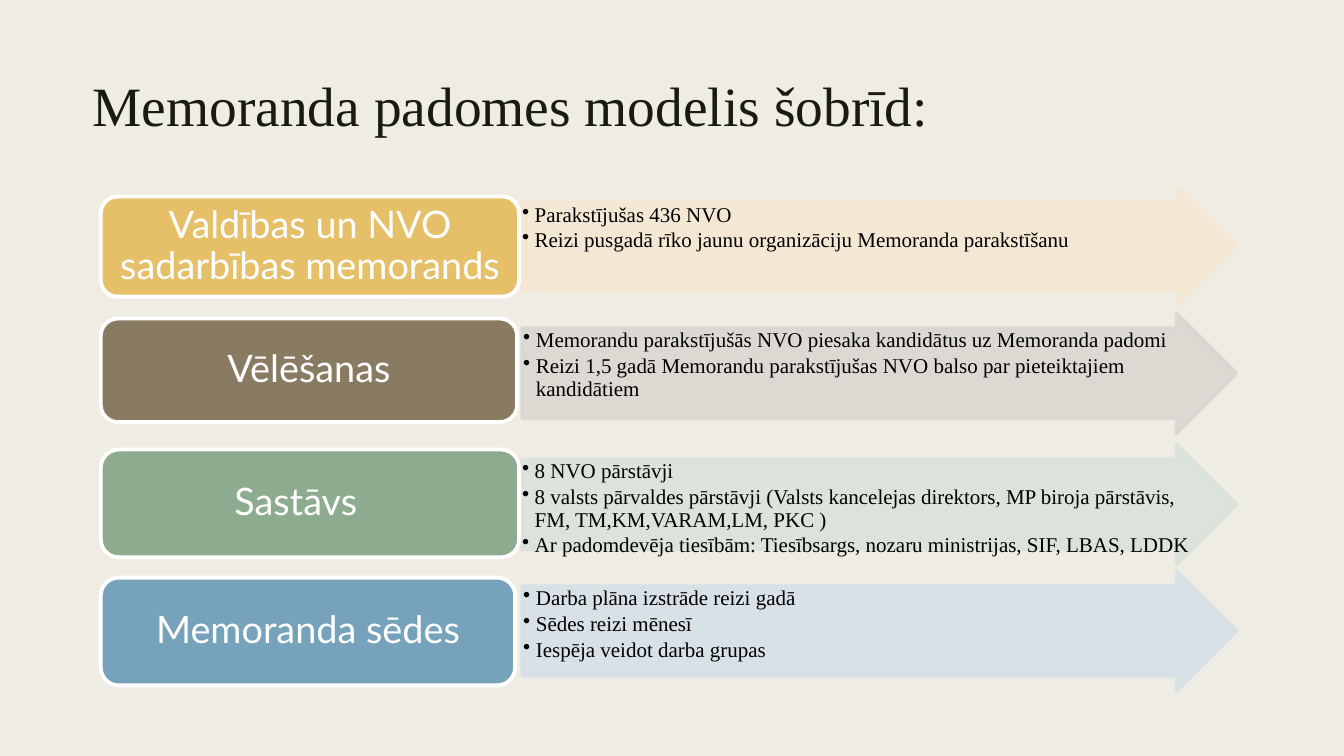
"""Build the slide that shows the current model of the Memorandum council."""
from collections import namedtuple

from lxml.etree import SubElement
from pptx import Presentation
from pptx.dml.color import RGBColor
from pptx.enum.shapes import MSO_SHAPE as Preset
from pptx.enum.text import MSO_ANCHOR as Anchor, PP_ALIGN as Align
from pptx.oxml.ns import qn
from pptx.util import Pt

BACKGROUND = RGBColor(0xEF, 0xED, 0xE3)
TITLE_INK = RGBColor(0x19, 0x1B, 0x0E)
BLACK = RGBColor(0x00, 0x00, 0x00)
WHITE = RGBColor(0xFF, 0xFF, 0xFF)
GOLD = RGBColor(0xE6, 0xC0, 0x69)
PALE_GOLD = RGBColor(0xF5, 0xE8, 0xD4)
BROWN = RGBColor(0x89, 0x7B, 0x61)
PALE_BROWN = RGBColor(0xDA, 0xD7, 0xD2)
GREEN = RGBColor(0x8D, 0xAB, 0x8E)
PALE_GREEN = RGBColor(0xDB, 0xE2, 0xDB)
BLUE = RGBColor(0x77, 0xA2, 0xBB)
PALE_BLUE = RGBColor(0xD6, 0xE0, 0xE7)

TITLE_FONT = {"name": "Times New Roman", "size": Pt(39.6)}
LABEL_FONT = {"name": "Lato", "size": Pt(27)}
DETAIL_FONT = {"name": "Times New Roman", "size": Pt(15)}

TITLE_FRAME = {"word_wrap": True, "vertical_anchor": Anchor.MIDDLE}
LABEL_FRAME = {
    "word_wrap": True, "vertical_anchor": Anchor.MIDDLE,
    "margin_left": Pt(8), "margin_right": Pt(8),
    "margin_top": Pt(4), "margin_bottom": Pt(4),
}
DETAIL_FRAME = {
    "word_wrap": True, "vertical_anchor": Anchor.TOP,
    "margin_left": Pt(0.75), "margin_right": Pt(0.75),
    "margin_top": Pt(0.75), "margin_bottom": Pt(0.75),
}

TITLE_PARAGRAPH = {"alignment": Align.LEFT, "line_spacing": 0.89}
LABEL_PARAGRAPH = {"alignment": Align.CENTER, "line_spacing": 0.9}
DETAIL_PARAGRAPH = {
    "alignment": Align.LEFT, "line_spacing": 0.9,
    "space_after": Pt(2.25), "level": 1,
}

BULLET_INDENT = Pt(9)
LABEL_LEFT = 72
ARROW_RIGHT = 883.2

Row = namedtuple("Row", "label details label_box arrow_box color pale")

ROWS = [
    Row("Valdības un NVO sadarbības memorands",
        ["Parakstījušas 436 NVO",
         "Reizi pusgadā rīko jaunu organizāciju Memoranda parakstīšanu"],
        (140.4, 298.8, 71.5), (372.2, 134.6, 83), GOLD, PALE_GOLD),
    Row("Vēlēšanas",
        ["Memorandu parakstījušās NVO piesaka kandidātus uz Memoranda padomi",
         "Reizi 1,5 gadā Memorandu parakstījušas NVO balso par pieteiktajiem kandidātiem"],
        (227.5, 297.4, 74), (373, 223.9, 85.5), BROWN, PALE_BROWN),
    Row("Sastāvs\t",
        ["8 NVO pārstāvji",
         "8 valsts pārvaldes pārstāvji (Valsts kancelejas direktors, MP biroja pārstāvis, "
         "FM, TM,KM,VARAM,LM, PKC )",
         "Ar padomdevēja tiesībām: Tiesībsargs, nozaru ministrijas, SIF, LBAS, LDDK"],
        (321.1, 298.8, 77), (372.2, 317.5, 85.5), GREEN, PALE_GREEN),
    Row("Memoranda sēdes",
        ["Darba plāna izstrāde reizi gadā",
         "Sēdes reizi mēnesī",
         "Iespēja veidot darba grupas"],
        (412.6, 296, 77), (373, 408.2, 85), BLUE, PALE_BLUE),
]


def apply_format(target, values):
    """Set every attribute named in a dict of format values."""
    for name, value in values.items():
        setattr(target, name, value)


def add_bullet(paragraph):
    """Give a paragraph a round bullet with a hanging indent."""
    properties = paragraph._p.get_or_add_pPr()
    properties.set("marL", str(BULLET_INDENT))
    properties.set("indent", str(-BULLET_INDENT))
    SubElement(properties, qn("a:buChar")).set("char", "•")


def write_text(shape, lines, frame_format, paragraph_format, font_format, color, bulleted=False):
    """Fill a shape with one formatted paragraph per line."""
    frame = shape.text_frame
    apply_format(frame, frame_format)
    for index, line in enumerate(lines):
        paragraph = frame.add_paragraph() if index else frame.paragraphs[0]
        apply_format(paragraph, paragraph_format)
        if bulleted:
            add_bullet(paragraph)
        run = paragraph.add_run()
        run.text = line
        apply_format(run.font, font_format)
        run.font.color.rgb = color


def add_preset(slide, preset, box, fill_color, line_color):
    """Add a filled and outlined preset shape without a shadow."""
    shape = slide.shapes.add_shape(preset, *map(Pt, box))
    shape.shadow.inherit = False
    shape.fill.solid()
    shape.fill.fore_color.rgb = fill_color
    shape.line.color.rgb = line_color
    shape.line.width = Pt(2.75)
    return shape


def set_opacity(shape, percent):
    """Make the fill and outline of a shape partly transparent."""
    for color in shape._element.spPr.iter(qn("a:srgbClr")):
        SubElement(color, qn("a:alpha")).set("val", str(percent * 1000))


def add_title(slide, text):
    """Add the slide heading."""
    title = slide.shapes.add_textbox(Pt(59), Pt(50.4), Pt(841.7), Pt(54))
    write_text(title, [text], TITLE_FRAME, TITLE_PARAGRAPH, TITLE_FONT, TITLE_INK)


def add_arrow(slide, row):
    """Add the pale arrow that holds the details of a row."""
    left, top, height = row.arrow_box
    box = (left, top, ARROW_RIGHT - left, height)
    arrow = add_preset(slide, Preset.RIGHT_ARROW, box, row.pale, row.pale)
    arrow.adjustments[0] = 0.75
    arrow.adjustments[1] = 0.5
    set_opacity(arrow, 90)
    write_text(arrow, row.details, DETAIL_FRAME, DETAIL_PARAGRAPH, DETAIL_FONT, BLACK,
               bulleted=True)


def add_label(slide, row):
    """Add the rounded box that names a row."""
    box = (LABEL_LEFT, *row.label_box)
    label = add_preset(slide, Preset.ROUNDED_RECTANGLE, box, row.color, WHITE)
    write_text(label, [row.label], LABEL_FRAME, LABEL_PARAGRAPH, LABEL_FONT, WHITE)


def main():
    """Build and save the presentation."""
    presentation = Presentation()
    presentation.slide_width = Pt(960)
    presentation.slide_height = Pt(540)
    slide = presentation.slides.add_slide(presentation.slide_layouts[6])
    slide.background.fill.solid()
    slide.background.fill.fore_color.rgb = BACKGROUND
    add_title(slide, "Memoranda padomes modelis šobrīd:")
    for row in ROWS:
        add_arrow(slide, row)
        add_label(slide, row)
    presentation.save("out.pptx")


if __name__ == "__main__":
    main()
